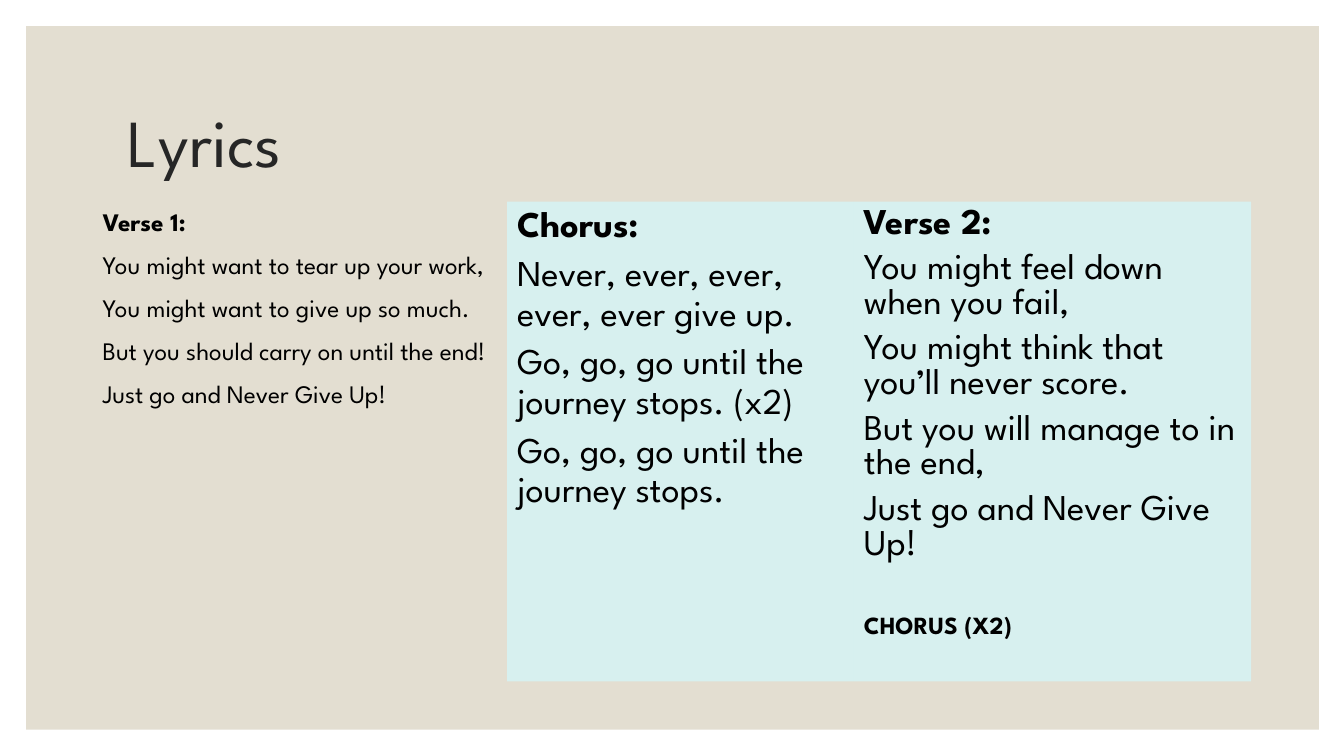
"""Build the Lyrics slide with two verses and a chorus."""
from lxml.etree import SubElement
from pptx import Presentation
from pptx.dml.color import RGBColor
from pptx.enum.shapes import MSO_SHAPE as Shape
from pptx.enum.text import MSO_ANCHOR as Anchor, PP_ALIGN as Align
from pptx.oxml.ns import qn
from pptx.util import Inches, Pt

FONT = "League Spartan"
BLACK = RGBColor(0x00, 0x00, 0x00)
CHARCOAL = RGBColor(0x26, 0x26, 0x26)
SAND = RGBColor(0xE3, 0xDE, 0xD1)
AQUA = RGBColor(0xD4, 0xF5, 0xF7)

TITLE = "Lyrics"
VERSE_1 = [
    "Verse 1:",
    "You might want to tear up your work,",
    "You might want to give up so much.",
    "But you should carry on until the end!",
    "Just go and Never Give Up!",
]
CHORUS = [
    "Chorus:",
    "Never, ever, ever, ever, ever give up.",
    "Go, go, go until the journey stops. (x2)",
    "Go, go, go until the journey stops.",
]
VERSE_2 = [
    "Verse 2:",
    "You might feel down when you fail,",
    "You might think that you’ll never score.",
    "But you will manage to in the end,",
    "Just go and Never Give Up!",
]
REPEAT = "CHORUS (X2)"

COLUMN_TOP, COLUMN_HEIGHT = 2, 4.76
COLUMNS = [
    (VERSE_1, 0.92, 4.11, None, 18, 1.0, 9),
    (CHORUS, 5.03, 3.44, AQUA, 25.9, 0.9, 7),
    (VERSE_2, 8.47, 3.94, AQUA, 25.9, 0.8, 7.5),
]


def add_box(page, left, top, width, height, fill=None, opacity=100):
    area = [Inches(value) for value in (left, top, width, height)]
    if fill is None:
        box = page.shapes.add_textbox(*area)
    else:
        box = page.shapes.add_shape(Shape.RECTANGLE, *area)
        box.shadow.inherit = False
        box.line.fill.background()
        box.fill.solid()
        box.fill.fore_color.rgb = fill
        if opacity < 100:
            color = box.fill._xPr.find(qn("a:solidFill"))[0]
            SubElement(color, qn("a:alpha")).set("val", str(opacity * 1000))
    box.text_frame.word_wrap = True
    box.text_frame.vertical_anchor = Anchor.TOP
    return box


def add_line(frame, text, size, color=BLACK, bold=False, spacing=1.0, before=0):
    para = frame.paragraphs[0]
    if para.runs:
        para = frame.add_paragraph()
    para.alignment = Align.LEFT
    para.line_spacing = spacing
    para.space_before = Pt(before)
    span = para.add_run()
    span.text = text
    span.font.name = FONT
    span.font.size = Pt(size)
    span.font.bold = bold
    span.font.color.rgb = color


def main():
    deck = Presentation()
    deck.slide_width, deck.slide_height = Inches(13.33), Inches(7.5)
    page = deck.slides.add_slide(deck.slide_layouts[6])
    add_box(page, 0.26, 0.26, 12.82, 6.98, SAND)

    title = add_box(page, 1.17, 0.7, 11, 1.5).text_frame
    title.vertical_anchor = Anchor.MIDDLE
    add_line(title, TITLE, 48, CHARCOAL, spacing=0.9)

    for lines, left, width, fill, size, spacing, before in COLUMNS:
        frame = add_box(page, left, COLUMN_TOP, width, COLUMN_HEIGHT, fill, 80).text_frame
        for index, line in enumerate(lines):
            add_line(frame, line, size, bold=index == 0, spacing=spacing, before=before)
        if lines is VERSE_2:
            add_line(frame, REPEAT, 17.6, bold=True, spacing=spacing, before=38)

    deck.save("out.pptx")


if __name__ == "__main__":
    main()
